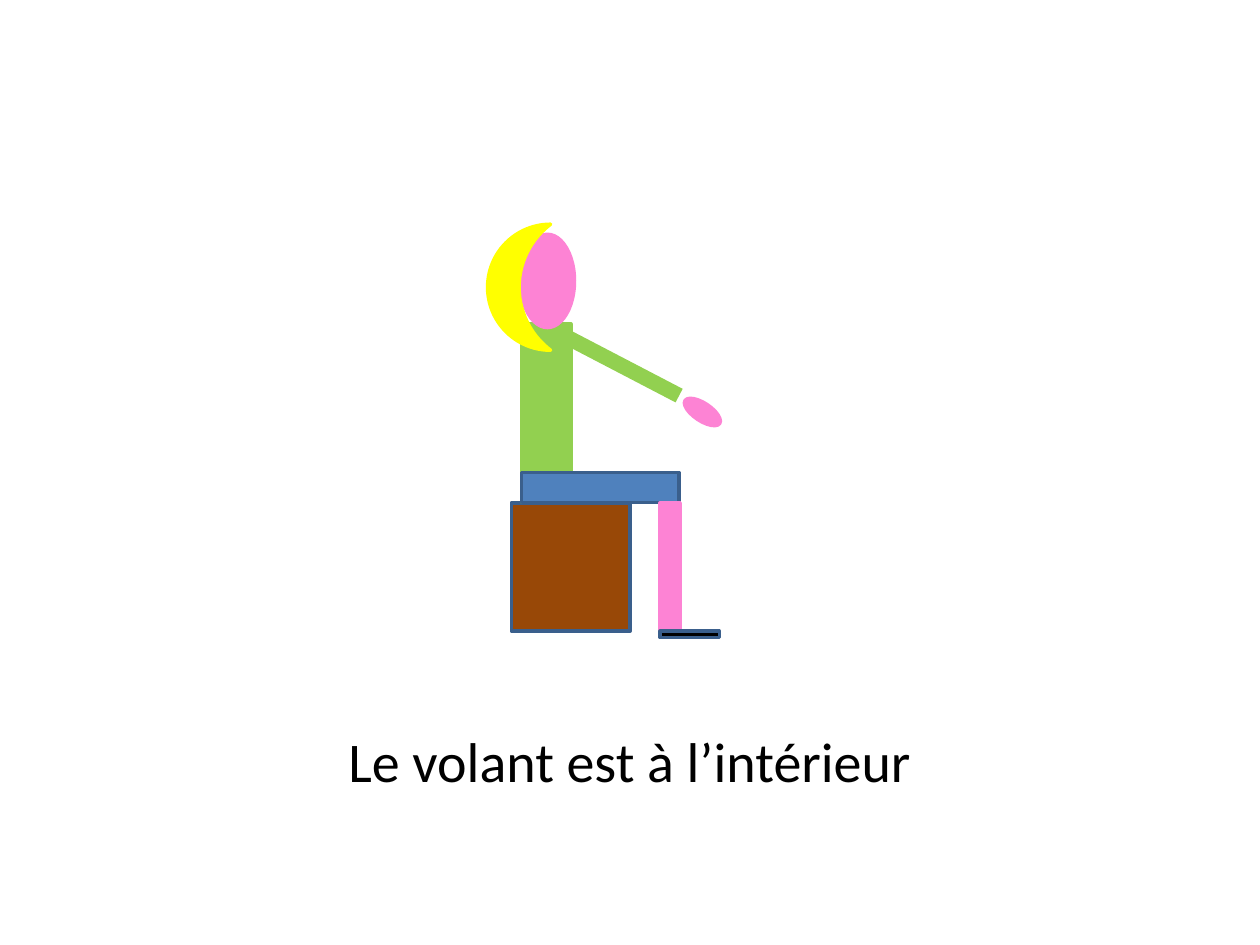
from dataclasses import dataclass

from lxml import etree
from pptx import Presentation
from pptx.dml.color import RGBColor
from pptx.enum.shapes import MSO_CONNECTOR, MSO_SHAPE
from pptx.enum.text import MSO_ANCHOR, PP_ALIGN
from pptx.oxml.ns import qn
from pptx.util import Inches, Pt

RECTANGLE, OVAL, MOON = MSO_SHAPE.RECTANGLE, MSO_SHAPE.OVAL, MSO_SHAPE.MOON
STRAIGHT = MSO_CONNECTOR.STRAIGHT
MIDDLE, CENTER = MSO_ANCHOR.MIDDLE, PP_ALIGN.CENTER


@dataclass(frozen=True)
class Theme:
    font: str = "Calibri"
    caption_size: float = 32
    outline_width: float = 2
    arm_width: float = 8.75
    ink: str = "000000"
    outline: str = "3A5F8C"
    wood: str = "984807"
    shirt: str = "92D050"
    trousers: str = "4F81BD"
    skin: str = "FD83D4"
    hair: str = "FFFF00"


THEME = Theme()

# Content: places are columns and rows of a 100 by 75 grid
COLUMNS, ROWS = 100, 75
SLIDE_WIDTH, SLIDE_HEIGHT = Inches(10), Inches(7.5)
CAPTION = "Le volant est à l’intérieur"
CAPTION_PLACE = (5, 56.3, 90, 8)

SEAT_TOP, FLOOR = 39.9, 50.1
BACK, KNEE = 41.4, 52.4
LEG_HEIGHT = FLOOR - SEAT_TOP

# Shape, place (left, top, width, height), fill, outline, rotation
BODY = [
    (RECTANGLE, (40.6, SEAT_TOP, 9.4, LEG_HEIGHT), THEME.wood, THEME.outline, 0),
    (RECTANGLE, (BACK, 25.7, 3.9, 14.2), THEME.shirt, THEME.shirt, 0),
    (RECTANGLE, (BACK, 37.5, 12.5, 2.4), THEME.trousers, THEME.outline, 0),
    (RECTANGLE, (KNEE, SEAT_TOP, 1.6, LEG_HEIGHT), THEME.skin, THEME.skin, 0),
    (RECTANGLE, (KNEE, FLOOR, 4.7, 0.5), THEME.ink, THEME.outline, 0),
    (OVAL, (41.3, 18.6, 4.3, 7.4), THEME.skin, THEME.skin, 0),
    (MOON, (38.7, 17.8, 5, 10), THEME.hair, THEME.hair, 0),
]
ARM = (44.5, 26.5, 53.9, 31.4)
HAND = (OVAL, (54.1, 32, 3.3, 1.4), THEME.skin, THEME.skin, 33.7)


def on_grid(place):
    units = (SLIDE_WIDTH / COLUMNS, SLIDE_HEIGHT / ROWS) * 2
    return [round(value * unit) for value, unit in zip(place, units)]


def set_line(line, color, width):
    line.color.rgb = RGBColor.from_string(color)
    line.width = Pt(width)


def add_part(page, kind, place, fill, outline, rotation):
    shape = page.shapes.add_shape(kind, *on_grid(place))
    shape.shadow.inherit = False
    shape.fill.solid()
    shape.fill.fore_color.rgb = RGBColor.from_string(fill)
    set_line(shape.line, outline, THEME.outline_width)
    shape.rotation = rotation


def add_limb(page, ends, color, width):
    limb = page.shapes.add_connector(STRAIGHT, *on_grid(ends))
    set_line(limb.line, color, width)
    etree.SubElement(limb._element.spPr, qn("a:effectLst"))


def add_text(page, text, *, place, size, color, align):
    box = page.shapes.add_textbox(*on_grid(place))
    frame = box.text_frame
    frame.word_wrap = True
    frame.vertical_anchor = MIDDLE
    para = frame.paragraphs[0]
    para.alignment = align
    span = para.add_run()
    span.text = text
    span.font.name = THEME.font
    span.font.size = Pt(size)
    span.font.color.rgb = RGBColor.from_string(color)


def main():
    deck = Presentation()
    deck.slide_width, deck.slide_height = SLIDE_WIDTH, SLIDE_HEIGHT
    page = deck.slides.add_slide(deck.slide_layouts[6])

    # Caption
    add_text(page, CAPTION, place=CAPTION_PLACE, size=THEME.caption_size,
             color=THEME.ink, align=CENTER)

    # Seated figure, from back to front
    for part in BODY:
        add_part(page, *part)
    add_limb(page, ARM, THEME.shirt, THEME.arm_width)
    add_part(page, *HAND)

    deck.save("out.pptx")


if __name__ == "__main__":
    main()
